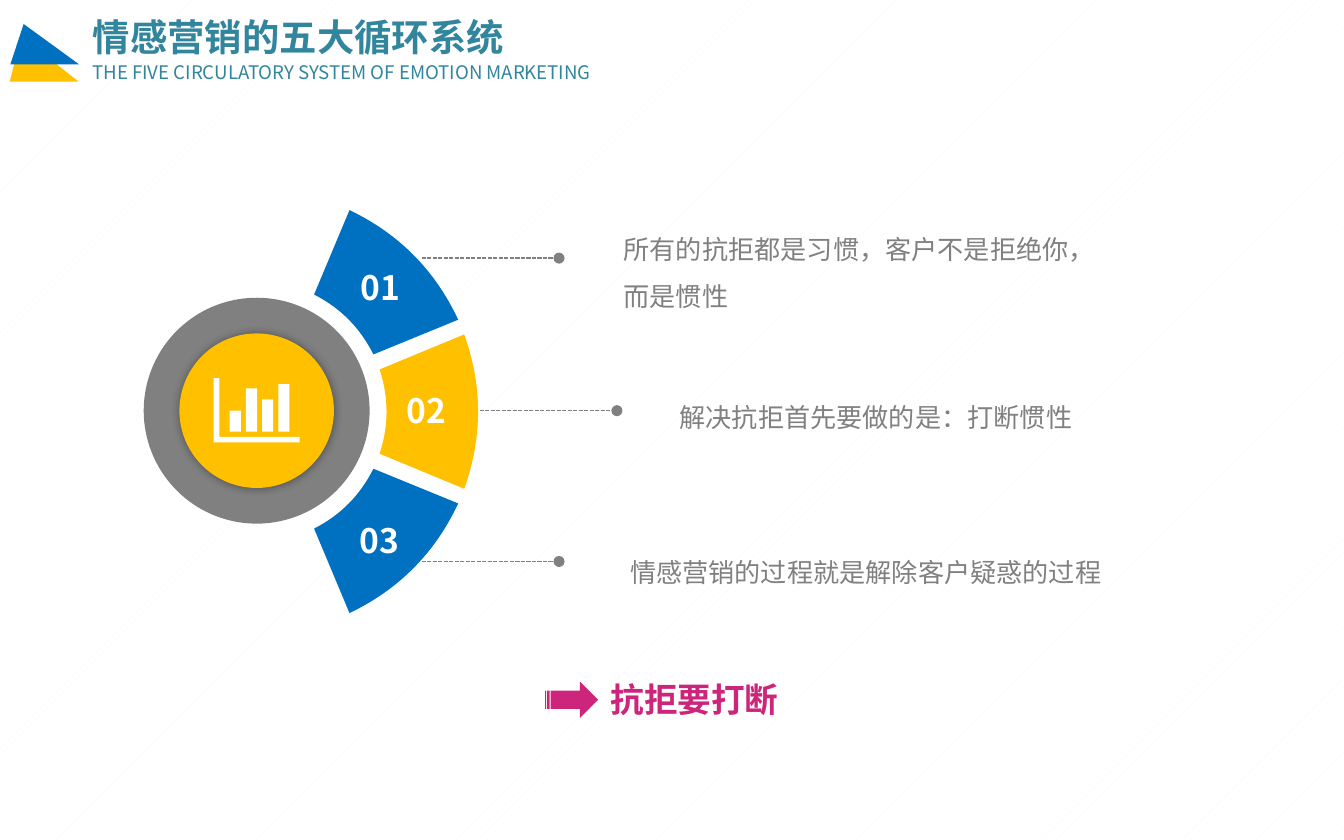
from dataclasses import dataclass
from math import asin, cos, degrees, radians, sin

from lxml import etree
from pptx import Presentation
from pptx.dml.color import RGBColor
from pptx.enum.dml import MSO_LINE, MSO_PATTERN
from pptx.enum.shapes import MSO_CONNECTOR, MSO_SHAPE
from pptx.enum.text import MSO_ANCHOR, MSO_AUTO_SIZE, PP_ALIGN
from pptx.oxml.ns import qn
from pptx.util import Pt

RECTANGLE = MSO_SHAPE.RECTANGLE
ELLIPSE = MSO_SHAPE.OVAL
TRIANGLE = MSO_SHAPE.ISOSCELES_TRIANGLE
ARROW = MSO_SHAPE.STRIPED_RIGHT_ARROW
STRAIGHT = MSO_CONNECTOR.STRAIGHT
DASH = MSO_LINE.SQUARE_DOT
UPWARD = MSO_PATTERN.WIDE_UPWARD_DIAGONAL
DOWNWARD = MSO_PATTERN.LIGHT_DOWNWARD_DIAGONAL
LEFT, CENTER = PP_ALIGN.LEFT, PP_ALIGN.CENTER
TITLE_ONLY = 5


@dataclass(frozen=True)
class Theme:
    font: str = "Noto Sans CJK SC"
    teal: str = "31859C"
    blue: str = "0070C0"
    amber: str = "FFC000"
    gray: str = "808080"
    magenta: str = "CC257B"
    white: str = "FFFFFF"
    stripe: str = "FBFBFB"
    backdrop: str = "F2F2F2"
    title: int = 20
    heading: int = 18
    body: int = 14
    caption: int = 10


THEME = Theme()
HUB = (137.5, 220)
FAN = (137.1, 220.5)
INNER, OUTER = 70, 119
SECTOR_STEP = 44.75
HALF_GAP = 4.5

# number, fill, number position, leader start, statement, statement box
SECTORS = [
    ("01", THEME.blue, (185.5, 139.7), (226, 138.3),
     "所有的抗拒都是习惯，客户不是拒绝你，而是惯性", (327, 113, 280, 58)),
    ("02", THEME.amber, (210, 205.2), (257, 220),
     "解决抗拒首先要做的是：打断惯性", (357, 203, 280, 30)),
    ("03", THEME.blue, (185, 275), (226, 300.8),
     "情感营销的过程就是解除客户疑惑的过程", (330.5, 286, 280, 32)),
]


def rgb(value):
    return RGBColor.from_string(value)


def place(sp, box):
    sp.left, sp.top, sp.width, sp.height = map(Pt, box)


def paint(sp, color):
    sp.shadow.inherit = False
    sp.fill.solid()
    sp.fill.fore_color.rgb = rgb(color)
    sp.line.fill.background()


def hatch(fill, pattern, fore, back):
    fill.patterned()
    fill.pattern = pattern
    fill.fore_color.rgb = rgb(fore)
    fill.back_color.rgb = rgb(back)


def write(sp, text, size, color, bold=False, align=LEFT, spacing=1.0):
    tf = sp.text_frame
    tf.word_wrap = True
    tf.auto_size = MSO_AUTO_SIZE.NONE
    tf.vertical_anchor = MSO_ANCHOR.TOP
    p = tf.paragraphs[0]
    p.alignment = align
    p.line_spacing = spacing
    r = p.add_run()
    r.text = text
    r.font.name = THEME.font
    r.font.size = Pt(size)
    r.font.bold = bold
    r.font.color.rgb = rgb(color)
    east_asian = etree.SubElement(r.font._element, qn("a:ea"))
    east_asian.set("typeface", THEME.font)


def add_text(slide, box, text, size, color, **style):
    sp = slide.shapes.add_textbox(*map(Pt, box))
    write(sp, text, size, color, **style)


def add_preset(slide, kind, box, color):
    sp = slide.shapes.add_shape(kind, *map(Pt, box))
    paint(sp, color)
    return sp


def add_mirrored_triangle(slide, box, apex, color):
    sp = add_preset(slide, TRIANGLE, box, color)
    sp.adjustments[0] = apex
    sp.element.spPr.get_or_add_xfrm().set("flipH", "1")


def add_outline(slide, contours, color):
    """Draw one filled freeform from closed contours given in points."""
    contours = [[(Pt(x), Pt(y)) for x, y in contour] for contour in contours]
    builder = slide.shapes.build_freeform(*contours[0][0])
    for i, contour in enumerate(contours):
        if i:
            builder.move_to(*contour[0])
        builder.add_line_segments(contour[1:], close=True)
    sp = builder.convert_to_shape()
    paint(sp, color)
    return sp


def bend(start, middle, end):
    """Replace two line segments by one cubic curve through their joint."""
    s, m, e = [[int(node[0].get(axis)) for axis in "xy"]
               for node in (start, middle, end)]
    pull = [2 * b - (a + c) / 2 for a, b, c in zip(s, m, e)]
    curve = etree.Element(qn("a:cubicBezTo"))
    controls = [[a + (q - a) * 2 / 3 for a, q in zip(knot, pull)]
                for knot in (s, e)]
    for x, y in (*controls, e):
        etree.SubElement(curve, qn("a:pt"), x=str(round(x)), y=str(round(y)))
    middle.getparent().replace(middle, curve)
    end.getparent().remove(end)


def arc(radius, middle):
    """Start, middle and end of an arc, short of its sector by the half gap."""
    half = 22.5 - degrees(asin(HALF_GAP / radius))
    angles = [radians(middle + turn) for turn in (-half, 0, half)]
    return [(FAN[0] + radius * cos(a), FAN[1] + radius * sin(a))
            for a in angles]


def add_sector(slide, middle, color):
    corners = arc(OUTER, middle) + arc(INNER, middle)[::-1]
    sp = add_outline(slide, [corners], color)
    nodes = list(next(sp.element.iter(qn("a:path"))))
    bend(*nodes[0:3])
    bend(*nodes[3:6])


def add_leader(slide, x, y, length=73.5):
    line = slide.shapes.add_connector(
        STRAIGHT, Pt(x), Pt(y), Pt(x + length), Pt(y))
    line.line.color.rgb = rgb(THEME.gray)
    line.line.width = Pt(0.75)
    line.line.dash_style = DASH
    etree.SubElement(line.line._get_or_add_ln(), qn("a:tailEnd")).set("type", "oval")
    etree.SubElement(line.element.spPr, qn("a:effectLst"))


def add_glow_shadow(sp, blur, opacity):
    effects = sp.element.spPr.find(qn("a:effectLst"))
    shadow = etree.SubElement(effects, qn("a:outerShdw"),
                              blurRad=str(Pt(blur)), dist="0", dir="0",
                              algn="ctr", rotWithShape="0")
    color = etree.SubElement(shadow, qn("a:srgbClr"), val="000000")
    etree.SubElement(color, qn("a:alpha"), val=str(opacity * 1000))


def add_bar_icon(slide):
    left, top, right, bottom, stroke = 114.5, 202.5, 160.5, 237, 3
    axes = [(left, top), (left + stroke, top),
            (left + stroke, bottom - stroke), (right, bottom - stroke),
            (right, bottom), (left, bottom)]
    contours = [axes]
    base, width, pitch = 231.3, 6, 8.7
    for i, height in enumerate((11.3, 23.3, 17.3, 25.5)):
        x = 123 + i * pitch
        contours.append([(x, base - height), (x + width, base - height),
                         (x + width, base), (x, base)])
    add_outline(slide, contours, THEME.white)


def add_backdrop(slide):
    hatch(slide.background.fill, DOWNWARD, THEME.backdrop, THEME.backdrop)
    sheet = add_preset(slide, RECTANGLE, (0, 0, 720, 450), THEME.white)
    hatch(sheet.fill, UPWARD, THEME.stripe, THEME.white)
    slide.shapes.title.element.addprevious(sheet.element)


def add_header(slide):
    title = slide.shapes.title
    place(title, (42.5, 4.1, 300, 32))
    write(title, "情感营销的五大循环系统", THEME.title, THEME.teal, bold=True)
    add_text(slide, (42.5, 29.2, 340, 20),
             "THE FIVE CIRCULATORY SYSTEM OF EMOTION MARKETING",
             THEME.caption, THEME.teal)
    add_mirrored_triangle(slide, (5.3, 19.3, 36.8, 24.4), 0.835, THEME.amber)
    add_mirrored_triangle(slide, (5.6, 12.9, 36.8, 21.6), 0.807, THEME.blue)


def add_hub(slide):
    for radius, color in ((60.5, THEME.gray), (41.4, THEME.amber)):
        box = (HUB[0] - radius, HUB[1] - radius, 2 * radius, 2 * radius)
        disc = add_preset(slide, ELLIPSE, box, color)
    add_glow_shadow(disc, blur=5, opacity=40)
    add_bar_icon(slide)


def main():
    prs = Presentation()
    prs.slide_width, prs.slide_height = Pt(720), Pt(450)
    slide = prs.slides.add_slide(prs.slide_layouts[TITLE_ONLY])
    add_backdrop(slide)
    add_header(slide)
    add_hub(slide)
    for i, (number, color, spot, leader, text, box) in enumerate(SECTORS):
        add_sector(slide, (i - 1) * SECTOR_STEP, color)
        add_leader(slide, *leader)
        add_text(slide, (*spot, 36.7, 29), number, THEME.heading, THEME.white,
                 bold=True, align=CENTER)
        add_text(slide, box, text, THEME.body, THEME.gray, spacing=1.5)
    add_preset(slide, ARROW, (292, 365.2, 28.4, 19.4), THEME.magenta)
    add_text(slide, (320, 360, 120, 29), "抗拒要打断", THEME.heading,
             THEME.magenta, bold=True)
    prs.save("out.pptx")


if __name__ == "__main__":
    main()
